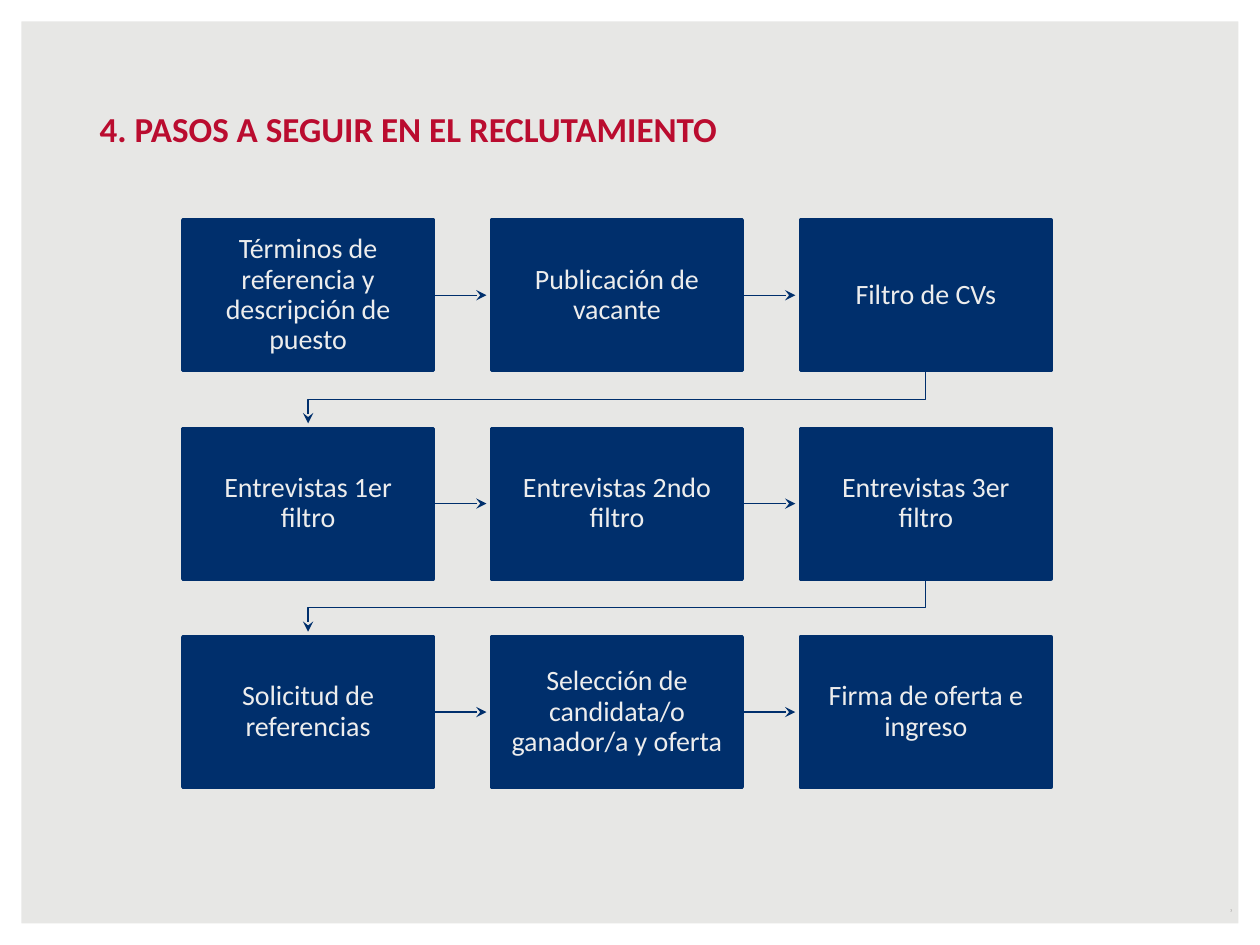
"""Build a slide with the nine recruitment steps as a snaking flow."""
from lxml import etree
from pptx import Presentation
from pptx import util as u
from pptx.dml import color
from pptx.enum import shapes, text
from pptx.oxml import ns

W, H, EDGE = 720, 540, 12.25
LEFT, TOP, BOX_W, BOX_H = 104.4, 125.7, 143.3, 86
STEP_X, STEP_Y = 176.5, 119.1
TIP_GAP = 2.9
STEPS = [
    ["Términos de referencia y descripción de puesto", "Publicación de vacante", "Filtro de CVs"],
    ["Entrevistas 1er filtro", "Entrevistas 2ndo filtro", "Entrevistas 3er filtro"],
    ["Solicitud de referencias", "Selección de candidata/o ganador/a y oferta",
     "Firma de oferta e ingreso"],
]


def rgb(value):
    return color.RGBColor.from_string(value)


class Deck:
    font = "Calibri"
    navy, red, pale, gray = "002F6C", "BA0C2F", "EDEDED", "6C6463"
    paper, white = "E7E7E5", "FFFFFF"

    def __init__(self):
        self.prs = Presentation()
        self.prs.slide_width, self.prs.slide_height = u.Pt(W), u.Pt(H)
        self.s = self.prs.slides.add_slide(self.prs.slide_layouts[5])
        fill = self.s.background.fill
        fill.solid()
        fill.fore_color.rgb = rgb(self.paper)

    def set_text(self, sp, words, size, ink, align, anchor, inset, bold=False, spacing=None):
        tf = sp.text_frame
        tf.text = words
        tf.word_wrap = True
        tf.auto_size = text.MSO_AUTO_SIZE.NONE
        tf.vertical_anchor = anchor
        tf.margin_left = tf.margin_right = tf.margin_top = tf.margin_bottom = u.Pt(inset)
        p = tf.paragraphs[0]
        p.alignment, p.line_spacing = align, spacing
        p.font.name, p.font.size, p.font.bold = self.font, u.Pt(size), bold
        p.font.color.rgb = rgb(ink)

    def title(self, words, x, y, w, h):
        sp = self.s.shapes.title
        sp.left, sp.top, sp.width, sp.height = map(u.Pt, (x, y, w, h))
        self.set_text(sp, words, 20, self.red, text.PP_ALIGN.LEFT,
                      text.MSO_ANCHOR.BOTTOM, 3.6, bold=True)

    def label(self, words, x, y, w, h):
        sp = self.s.shapes.add_textbox(*map(u.Pt, (x, y, w, h)))
        self.set_text(sp, words, 2, self.gray, text.PP_ALIGN.RIGHT, text.MSO_ANCHOR.MIDDLE, 3.6)

    def outline(self, *contours):
        pts = [[(u.Pt(x), u.Pt(y)) for x, y in contour] for contour in contours]
        closed = len(pts) > 1
        builder = self.s.shapes.build_freeform(*pts[0][0])
        builder.add_line_segments(pts[0][1:], close=closed)
        for contour in pts[1:]:
            builder.move_to(*contour[0])
            builder.add_line_segments(contour[1:], close=closed)
        sp = builder.convert_to_shape()
        sp.shadow.inherit = False
        return sp

    def frame(self):
        far_x, far_y = W - EDGE, H - EDGE
        sp = self.outline([(0, 0), (W, 0), (W, H), (0, H)],
                          [(EDGE, EDGE), (EDGE, far_y), (far_x, far_y), (far_x, EDGE)])
        sp.fill.solid()
        sp.fill.fore_color.rgb = rgb(self.white)
        sp.line.fill.background()

    def box(self, words, x, y):
        sp = self.s.shapes.add_shape(shapes.MSO_SHAPE.RECTANGLE,
                                     *map(u.Pt, (x, y, BOX_W, BOX_H)))
        sp.shadow.inherit = False
        sp.fill.solid()
        sp.fill.fore_color.rgb = sp.line.color.rgb = rgb(self.navy)
        sp.line.width = u.Pt(2)
        self.set_text(sp, words, 16, self.pale, text.PP_ALIGN.CENTER,
                      text.MSO_ANCHOR.MIDDLE, 8.6, spacing=0.9)
        return sp

    def arrow_line(self, sp):
        sp.line.color.rgb = rgb(self.navy)
        sp.line.width = u.Pt(0.75)
        ln = sp._element.spPr.find(ns.qn("a:ln"))
        etree.SubElement(ln, ns.qn("a:tailEnd"), type="stealth")

    def arrow(self, source, x, y, length):
        sp = self.s.shapes.add_connector(shapes.MSO_CONNECTOR.STRAIGHT,
                                         *map(u.Pt, (x, y, x + length, y)))
        sp.begin_connect(source, 3)
        self.arrow_line(sp)
        etree.SubElement(sp._element.spPr, ns.qn("a:effectLst"))

    def return_arrow(self, x1, y1, x2, y2):
        mid = (y1 + y2 + TIP_GAP) / 2
        sp = self.outline([(x1, y1), (x1, mid), (x2, mid), (x2, y2)])
        sp.fill.background()
        self.arrow_line(sp)


def main():
    d = Deck()
    d.frame()
    d.label("7", 697.7, 515.5, 10, 10)
    d.title("4. PASOS A SEGUIR EN EL RECLUTAMIENTO", 53.3, 33.8, 630, 55.4)
    last = len(STEPS[0]) - 1
    first_mid = LEFT + BOX_W / 2
    for row, names in enumerate(STEPS):
        y = TOP + row * STEP_Y
        for col, name in enumerate(names):
            x = LEFT + col * STEP_X
            sp = d.box(name, x, y)
            if col < last:
                d.arrow(sp, x + BOX_W, y + BOX_H / 2, STEP_X - BOX_W - TIP_GAP)
            elif row < len(STEPS) - 1:
                d.return_arrow(x + BOX_W / 2, y + BOX_H, first_mid, y + STEP_Y - TIP_GAP)
    d.prs.save("out.pptx")


if __name__ == "__main__":
    main()
